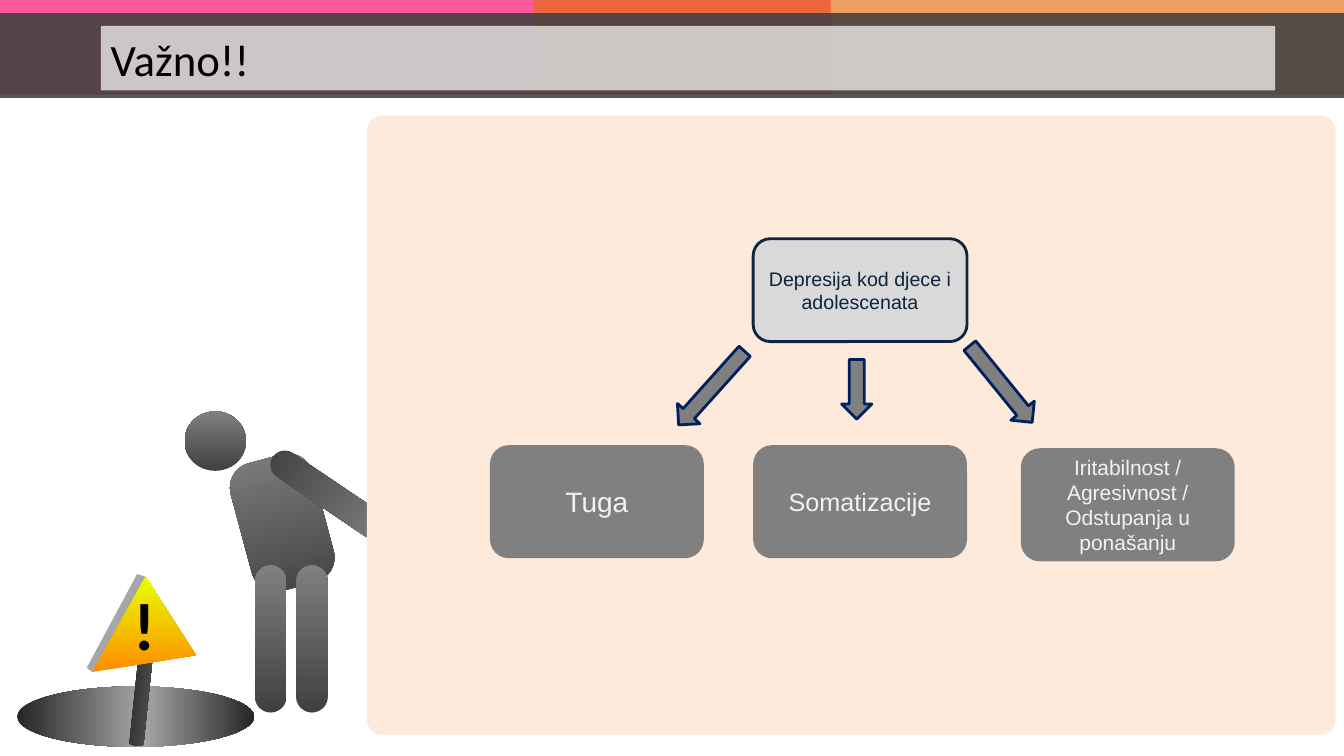
from lxml import etree
from pptx import Presentation
from pptx.dml.color import RGBColor
from pptx.enum.shapes import MSO_SHAPE as SHAPE
from pptx.enum.text import MSO_ANCHOR as ANCHOR, PP_ALIGN as ALIGN
from pptx.oxml.ns import qn
from pptx.util import Pt

FIGURE_GREY = [(0, "404040"), (100, "808080")]
BOX_WIDTH, BOX_HEIGHT = 152.8, 80.8


def rgb(hex_colour):
    return RGBColor.from_string(hex_colour)


def fill_solid(shape, colour, opacity=100):
    shape.fill.solid()
    shape.fill.fore_color.rgb = rgb(colour)
    if opacity < 100:
        colour_node = shape.fill._xPr.find(qn("a:solidFill"))[0]
        etree.SubElement(colour_node, qn("a:alpha"), val=str(opacity * 1000))


def fill_gradient(shape, stops, angle):
    """Fill with (percent, colour) stops; the angle runs clockwise."""
    shape.fill.gradient()
    gradient = shape.fill._xPr.find(qn("a:gradFill"))
    for child in list(gradient):
        gradient.remove(child)
    stop_list = etree.SubElement(gradient, qn("a:gsLst"))
    for percent, colour in stops:
        stop = etree.SubElement(stop_list, qn("a:gs"), pos=str(percent * 1000))
        etree.SubElement(stop, qn("a:srgbClr"), val=colour)
    etree.SubElement(gradient, qn("a:lin"), ang=str(angle * 60000), scaled="0")


def style(shape, fill, opacity=100, angle=270, line=None):
    shape.shadow.inherit = False
    if isinstance(fill, str):
        fill_solid(shape, fill, opacity)
    else:
        fill_gradient(shape, fill, angle)
    if line:
        shape.line.color.rgb = rgb(line)
        shape.line.width = Pt(2)
    else:
        shape.line.fill.background()


def add_part(slide, kind, box, fill, rotation=0, radius=None, **look):
    part = slide.shapes.add_shape(kind, *map(Pt, box))
    part.rotation = rotation
    if radius is not None:
        part.adjustments[0] = radius
    style(part, fill, **look)
    return part


def add_outline(slide, points, fill):
    builder = slide.shapes.build_freeform(*points[0], scale=Pt(1))
    builder.add_line_segments(points[1:], close=True)
    style(builder.convert_to_shape(), fill)


def write(shape, text, size, colour, font="Arial", bold=False,
          align=ALIGN.CENTER, anchor=ANCHOR.MIDDLE):
    frame = shape.text_frame
    frame.word_wrap = True
    frame.vertical_anchor = anchor
    frame.text = text
    for paragraph in frame.paragraphs:
        paragraph.alignment = align
        paragraph.font.size = Pt(size)
        paragraph.font.name = font
        paragraph.font.bold = bold
        paragraph.font.color.rgb = rgb(colour)


def add_figure(slide):
    add_part(slide, SHAPE.OVAL, (131.8, 293.8, 43.9, 42.5), FIGURE_GREY)
    add_part(slide, SHAPE.ROUNDED_RECTANGLE, (171.4, 326.2, 60.5, 94.3),
             FIGURE_GREY, rotation=345, radius=0.3)
    for left in (211.7, 182.2):
        add_part(slide, SHAPE.ROUNDED_RECTANGLE, (left, 403.9, 22.3, 105.1),
                 FIGURE_GREY, radius=0.5)
    add_part(slide, SHAPE.ROUNDED_RECTANGLE, (224.6, 305.3, 20.2, 95.8),
             FIGURE_GREY, rotation=124, radius=0.5)


def add_warning_sign(slide):
    add_part(slide, SHAPE.OVAL, (12.2, 490.3, 169.2, 43.2),
             [(0, "262626"), (53, "A6A6A6"), (100, "262626")], angle=0)
    add_part(slide, SHAPE.CAN, (96.5, 452.2, 10.1, 80.6),
             [(0, "262626"), (100, "595959")], rotation=6, angle=0)
    apex, left_corner, right_corner = (103.5, 412), (66.5, 480), (140, 468.5)
    add_outline(slide, [apex, left_corner, (61.5, 477), (98.5, 410)], "A6A6A6")
    add_outline(slide, [apex, right_corner, left_corner],
                [(0, "FF8D00"), (100, "E6FF00")])
    mark = slide.shapes.add_textbox(Pt(83), Pt(417), Pt(40), Pt(58))
    frame = mark.text_frame
    frame.margin_left = frame.margin_right = 0
    frame.margin_top = frame.margin_bottom = 0
    write(mark, "!", 48, "000000", font="Calibri", bold=True, anchor=ANCHOR.TOP)


def add_title(slide, text):
    for box, colour, opacity in (
        ((0, 0, 593.3, 67.7), "FF0066", 65),
        ((381.6, 0, 578.4, 67.7), "E46C0A", 65),
        ((0, 9.4, 960, 60.5), "404040", 88),
    ):
        add_part(slide, SHAPE.RECTANGLE, box, colour, opacity=opacity)
    title = add_part(slide, SHAPE.RECTANGLE, (72, 18.5, 838.8, 46), "FFFFFF", opacity=70)
    write(title, text, 32, "000000", font="Calibri", align=ALIGN.LEFT)


def add_diagram(slide):
    add_part(slide, SHAPE.ROUNDED_RECTANGLE, (262.1, 82.6, 692, 442.2),
             "FDEADA", radius=0.025)
    topic = add_part(slide, SHAPE.ROUNDED_RECTANGLE, (538, 170.5, BOX_WIDTH, 73.5),
                     "D9D9D9", line="0F243E")
    write(topic, "Depresija kod djece i adolescenata", 14, "0F243E")
    for left, top, text, size in (
        (350, 318, "Tuga", 20),
        (538, 318, "Somatizacije", 18),
        (729.2, 320.2, "Iritabilnost /\nAgresivnost /\nOdstupanja u ponašanju", 15),
    ):
        sign = add_part(slide, SHAPE.ROUNDED_RECTANGLE,
                        (left, top, BOX_WIDTH, BOX_HEIGHT), "808080")
        write(sign, text, size, "F2F2F2")
    for left, top, length, rotation in (
        (473, 266.4, 70.6, 131.9),
        (590.7, 267.3, 42.5, 90),
        (679.7, 263.5, 70.6, 50.9),
    ):
        add_part(slide, SHAPE.RIGHT_ARROW, (left, top, length, 21.6), "808080",
                 rotation=rotation, line="002060")


def main():
    deck = Presentation()
    deck.slide_width, deck.slide_height = Pt(960), Pt(540)
    slide = deck.slides.add_slide(deck.slide_layouts[6])
    add_figure(slide)
    add_warning_sign(slide)
    add_title(slide, "Važno!!")
    add_diagram(slide)
    deck.save("out.pptx")


if __name__ == "__main__":
    main()
